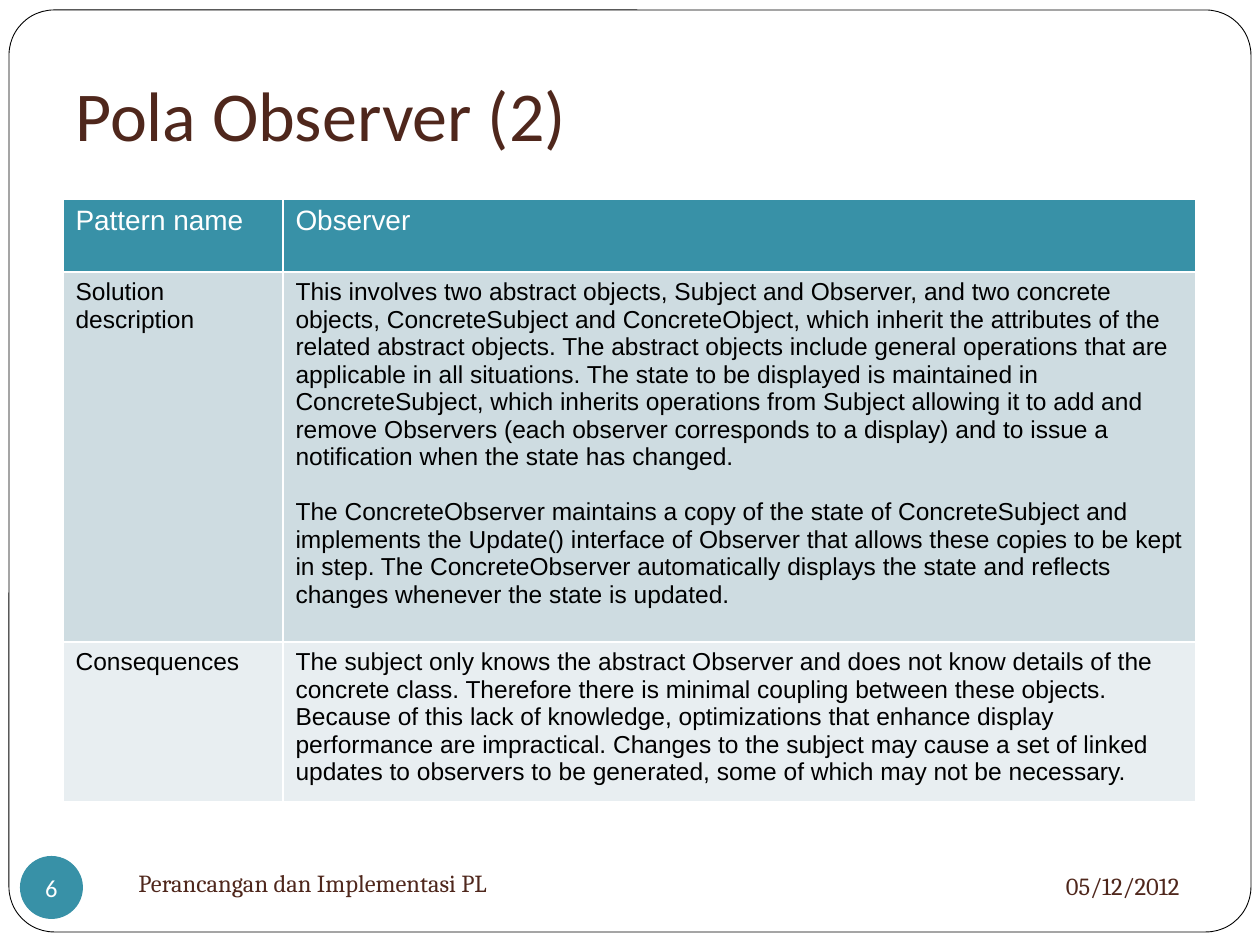
import pptx
import pptx.dml.color
import pptx.enum.shapes
import pptx.enum.text
import pptx.oxml
import pptx.oxml.ns
import pptx.util

RGB = pptx.dml.color.RGBColor
SHAPE = pptx.enum.shapes.MSO_SHAPE
ANCHOR = pptx.enum.text.MSO_ANCHOR
ALIGN = pptx.enum.text.PP_ALIGN

WHITE = RGB(0xFF, 0xFF, 0xFF)
BLACK = RGB(0x00, 0x00, 0x00)
BROWN = RGB(0x4F, 0x27, 0x1C)
TEAL = RGB(0x38, 0x91, 0xA7)
BAND_DARK = RGB(0xCE, 0xDC, 0xE1)
BAND_LIGHT = RGB(0xE8, 0xEE, 0xF1)

PX_PER_INCH = 126
PARAGRAPH_GAP = 15.75

COLUMN_WIDTHS = [220, 913]
# Row height, fill, text colour, text size, paragraphs of each cell
ROWS = [
    (73, TEAL, WHITE, 16, ["Pattern name"], ["Observer"]),
    (370, BAND_DARK, BLACK, 14, ["Solution description"], [
        "This involves two abstract objects, Subject and Observer, and two "
        "concrete objects, ConcreteSubject and ConcreteObject, which inherit "
        "the attributes of the related abstract objects. The abstract objects "
        "include general operations that are applicable in all situations. "
        "The state to be displayed is maintained in ConcreteSubject, which "
        "inherits operations from Subject allowing it to add and remove "
        "Observers (each observer corresponds to a display) and to issue a "
        "notification when the state has changed.",
        "The ConcreteObserver maintains a copy of the state of "
        "ConcreteSubject and implements the Update() interface of Observer "
        "that allows these copies to be kept in step. The ConcreteObserver "
        "automatically displays the state and reflects changes whenever the "
        "state is updated.",
    ]),
    (150, BAND_LIGHT, BLACK, 14, ["Consequences"], [
        "The subject only knows the abstract Observer and does not know "
        "details of the concrete class. Therefore there is minimal coupling "
        "between these objects. Because of this lack of knowledge, "
        "optimizations that enhance display performance are impractical. "
        "Changes to the subject may cause a set of linked updates to "
        "observers to be generated, some of which may not be necessary.",
    ]),
]


def px(length):
    return round(length * 914400 / PX_PER_INCH)


class Painter:
    """Holds the text style and the page being drawn."""

    heading_font = "Calibri"
    table_font = "Arial"
    footer_font = "Cambria"
    small_size = 14

    def __init__(self, page):
        self.page = page

    def set_text(self, frame, paragraphs, font, size, color, align=None):
        frame.text = "\n".join(paragraphs)
        for index, para in enumerate(frame.paragraphs):
            para.alignment = align
            if index:
                para.space_before = pptx.util.Pt(PARAGRAPH_GAP)
            for span in para.runs:
                span.font.name = font
                span.font.size = pptx.util.Pt(size)
                span.font.bold = False
                span.font.color.rgb = color

    def shape(self, kind, bounds, fill, line=None):
        shape = self.page.shapes.add_shape(kind, *map(px, bounds))
        shape.shadow.inherit = False
        shape.fill.solid()
        shape.fill.fore_color.rgb = fill
        if line is None:
            shape.line.fill.background()
        else:
            shape.line.color.rgb = line
            shape.line.width = pptx.util.Pt(0.5)
        return shape

    def frame(self, bounds):
        self.shape(SHAPE.ROUNDED_RECTANGLE, bounds, WHITE, BLACK).adjustments[0] = 0.049

    def badge(self, bounds, text):
        frame = self.shape(SHAPE.OVAL, bounds, TEAL).text_frame
        frame.margin_left = frame.margin_right = 0
        frame.margin_top = frame.margin_bottom = 0
        frame.word_wrap = False
        frame.vertical_anchor = ANCHOR.MIDDLE
        self.set_text(frame, [text], self.heading_font, self.small_size, WHITE, ALIGN.CENTER)

    def text_box(self, bounds, text, font, size, anchor=ANCHOR.MIDDLE, align=ALIGN.LEFT):
        frame = self.page.shapes.add_textbox(*map(px, bounds)).text_frame
        frame.word_wrap = True
        frame.vertical_anchor = anchor
        self.set_text(frame, [text], font, size, BROWN, align)
        return frame

    def title(self, bounds, text):
        frame = self.text_box(bounds, text, self.heading_font, 40, ANCHOR.BOTTOM)
        frame.margin_bottom = pptx.util.Inches(0.1)

    def footer(self, bounds, text, align):
        self.text_box(bounds, text, self.footer_font, self.small_size, align=align)

    def cell_borders(self, cell):
        properties = cell._tc.get_or_add_tcPr()
        for side in "LRTB":
            properties.append(pptx.oxml.parse_xml(
                f'<a:ln{side} {pptx.oxml.ns.nsdecls("a")} w="12700"><a:solidFill>'
                f'<a:srgbClr val="{WHITE}"/></a:solidFill></a:ln{side}>'))

    def table(self, left, top, widths, rows):
        height = sum(row[0] for row in rows)
        bounds = map(px, (left, top, sum(widths), height))
        table = self.page.shapes.add_table(len(rows), len(widths), *bounds).table
        for column, width in zip(table.columns, widths):
            column.width = px(width)
        for row, (height, fill, color, size, *contents) in zip(table.rows, rows):
            row.height = px(height)
            for cell, paragraphs in zip(row.cells, contents):
                self.cell_borders(cell)
                cell.fill.solid()
                cell.fill.fore_color.rgb = fill
                self.set_text(cell.text_frame, paragraphs, self.table_font, size, color)


def main():
    deck = pptx.Presentation()
    deck.slide_width, deck.slide_height = px(1260), px(945)
    painter = Painter(deck.slides.add_slide(deck.slide_layouts[6]))
    painter.frame((9, 10, 1242, 922))
    painter.title((63, 10, 1134, 158), "Pola Observer (2)")
    painter.table(63, 199, COLUMN_WIDTHS, ROWS)
    painter.badge((20, 856, 63, 63), "6")
    painter.footer((126, 851, 546, 63), "Perancangan dan Implementasi PL", ALIGN.LEFT)
    painter.footer((851, 853, 341, 66), "05/12/2012", ALIGN.RIGHT)
    deck.save("out.pptx")


if __name__ == "__main__":
    main()
